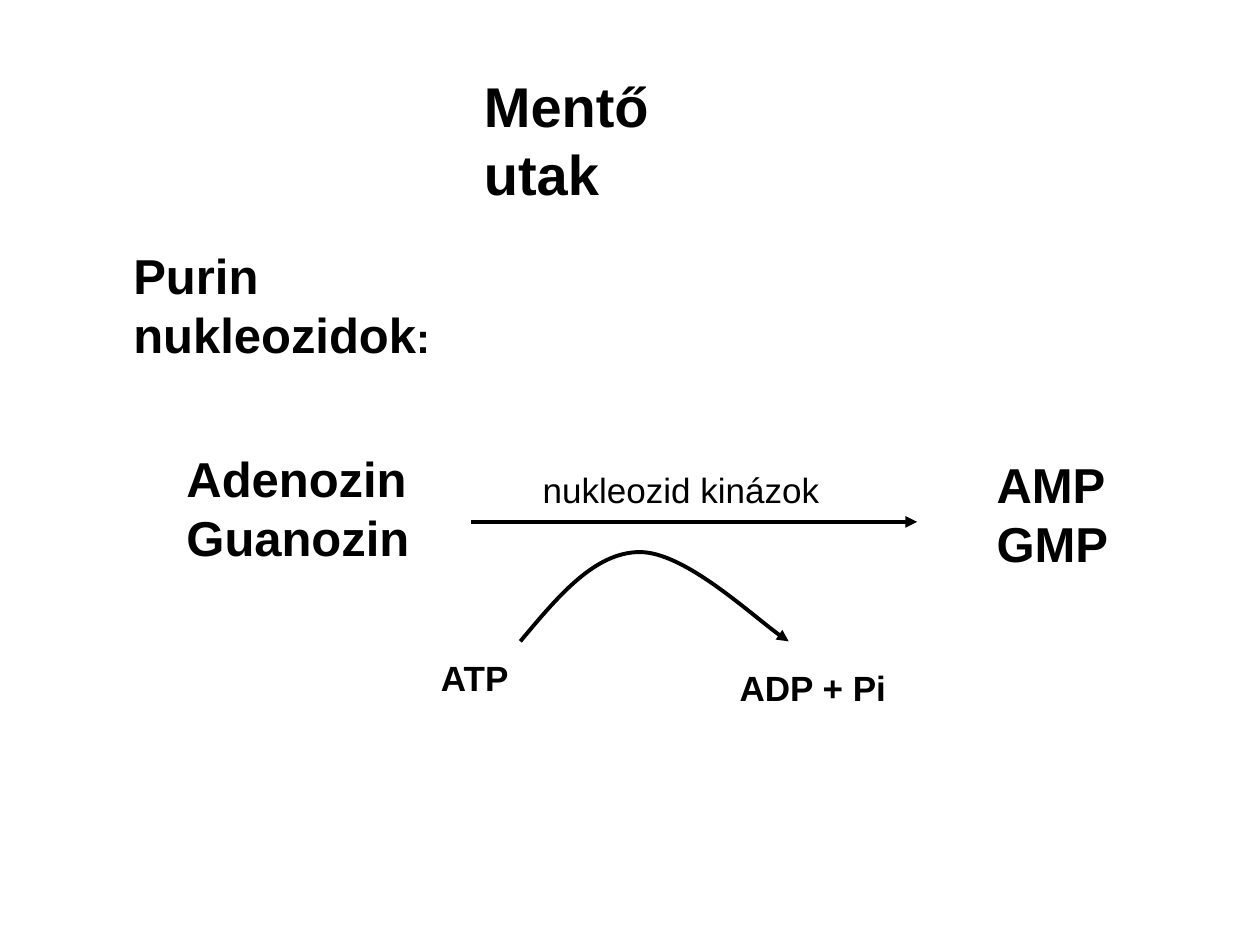
"""Build the slide on the salvage pathway of purine nucleosides."""
import pptx
import pptx.dml.color
import pptx.enum.shapes
import pptx.enum.text
import pptx.oxml
import pptx.oxml.ns
import pptx.util

Cm = pptx.util.Cm
Pt = pptx.util.Pt

THEME = {
    "font": "Arial",
    "ink": pptx.dml.color.RGBColor(0, 0, 0),
    "title": Pt(32),
    "compound": Pt(28),
    "colon": Pt(24),
    "label": Pt(20),
    "line": Pt(2.25),
}

TITLE = ("Mentő utak", (9.5, 1.32, 6.45, 1.6))
TITLE_RIGHT_INSET = 1.5

LABELS = [
    ([["Purin"], ["nukleozidok", ":"]], (2.44, 4.83, 6.5, 2.62), "compound", True),
    ([["Adenozin"], ["Guanozin"]], (3.51, 8.92, 5, 2.62), "compound", True),
    ([["nukleozid kinázok"]], (10.69, 9.32, 6.1, 1.09), "label", False),
    ([["AMP"], ["GMP"]], (19.84, 9.04, 2.77, 2.62), "compound", True),
    ([["ATP"]], (8.64, 13.11, 1.93, 1.09), "label", True),
    ([["ADP + Pi"]], (14.66, 13.31, 3.48, 1.09), "label", True),
]

REACTION = ((9.5, 10.52), (18.49, 10.52))
COFACTOR_CURVE = [
    (10.49, 12.93),
    (11.25, 12.02), (11.99, 11.13), (12.9, 11.13),
    (13.79, 11.13), (15.39, 12.62), (15.9, 12.93),
]


def format_paragraph(paragraph, size, bold):
    paragraph.alignment = pptx.enum.text.PP_ALIGN.LEFT
    font = paragraph.font
    font.name, font.size, font.bold = THEME["font"], THEME[size], bold
    font.color.rgb = THEME["ink"]


def add_title(slide):
    wording, box = TITLE
    title = slide.shapes.title
    title.left, title.top, title.width, title.height = map(Cm, box)
    frame = title.text_frame
    frame.text = wording
    frame.word_wrap = True
    frame.auto_size = pptx.enum.text.MSO_AUTO_SIZE.NONE
    frame.vertical_anchor = pptx.enum.text.MSO_ANCHOR.TOP
    frame.margin_right = Cm(TITLE_RIGHT_INSET)
    format_paragraph(frame.paragraphs[0], "title", True)


def add_label(slide, lines, box, size, bold):
    frame = slide.shapes.add_textbox(*map(Cm, box)).text_frame
    frame.word_wrap = False
    frame.auto_size = pptx.enum.text.MSO_AUTO_SIZE.SHAPE_TO_FIT_TEXT
    for number, pieces in enumerate(lines):
        paragraph = frame.add_paragraph() if number else frame.paragraphs[0]
        format_paragraph(paragraph, size, bold)
        for piece in pieces:
            run = paragraph.add_run()
            run.text = piece
            if piece == ":":
                run.font.size = THEME["colon"]


def draw_as_arrow(arrow):
    arrow.line.color.rgb = THEME["ink"]
    arrow.line.width = THEME["line"]
    namespace = pptx.oxml.ns.nsdecls("a")
    outline = arrow.line._get_or_add_ln()
    outline.append(pptx.oxml.parse_xml(f'<a:tailEnd {namespace} type="triangle"/>'))
    arrow._element.spPr.append(pptx.oxml.parse_xml(f"<a:effectLst {namespace}/>"))


def add_reaction(slide):
    start, end = REACTION
    straight = pptx.enum.shapes.MSO_CONNECTOR.STRAIGHT
    draw_as_arrow(slide.shapes.add_connector(straight, *map(Cm, start + end)))


def add_cofactor_curve(slide):
    start, *controls = [(Cm(x), Cm(y)) for x, y in COFACTOR_CURVE]
    builder = slide.shapes.build_freeform(*start)
    builder.add_line_segments(controls, close=False)
    curve = builder.convert_to_shape()
    curve.fill.background()
    qn = pptx.oxml.ns.qn
    outline = curve._element.find(".//" + qn("a:path"))
    segments = outline.findall(qn("a:lnTo"))
    for first in range(0, len(segments), 3):
        bezier = pptx.oxml.parse_xml(f'<a:cubicBezTo {pptx.oxml.ns.nsdecls("a")}/>')
        for segment in segments[first:first + 3]:
            bezier.append(segment[0])
            outline.remove(segment)
        outline.append(bezier)
    draw_as_arrow(curve)


def main():
    presentation = pptx.Presentation()
    presentation.slide_width, presentation.slide_height = Cm(25.4), Cm(19.05)
    slide = presentation.slides.add_slide(presentation.slide_layouts[5])
    add_title(slide)
    for label in LABELS:
        add_label(slide, *label)
    add_reaction(slide)
    add_cofactor_curve(slide)
    presentation.save("out.pptx")


if __name__ == "__main__":
    main()
